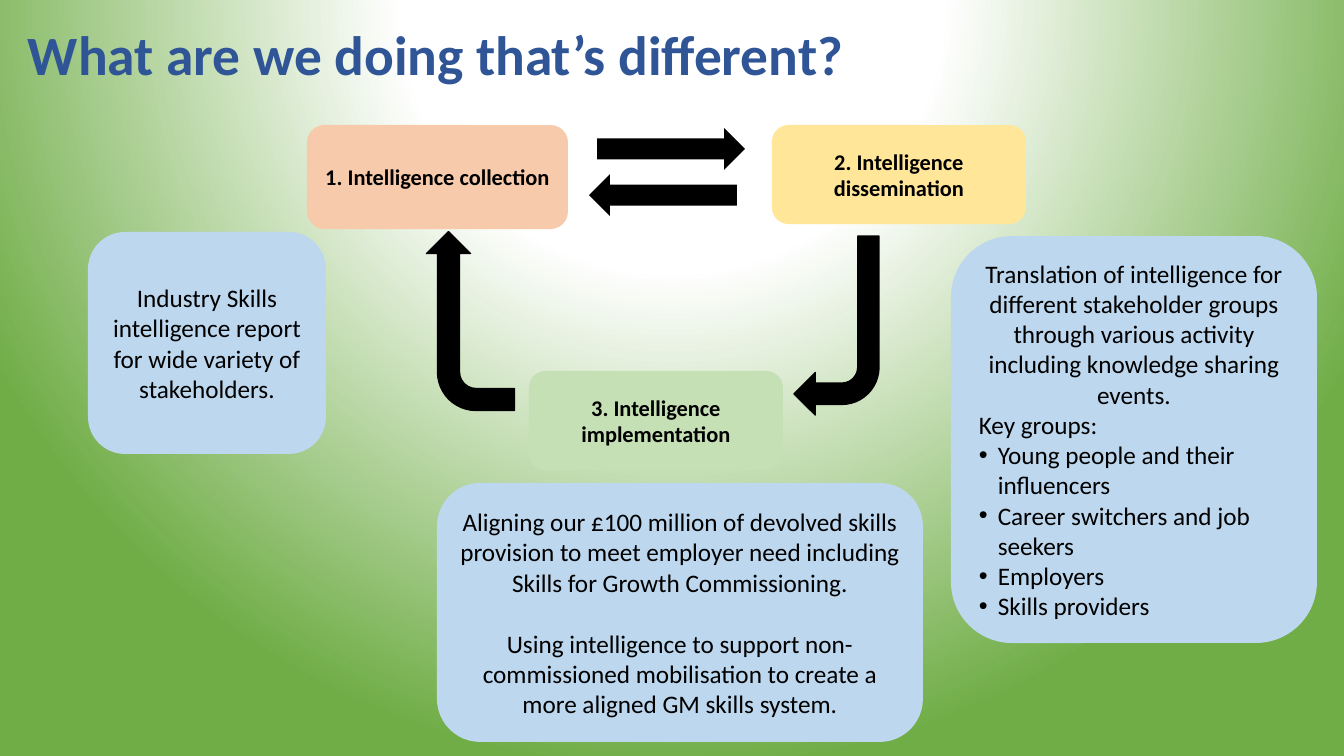
"""Build the slide showing the three-step skills intelligence cycle."""
from dataclasses import dataclass

from pptx import Presentation
from pptx.dml.color import RGBColor
from pptx.enum.shapes import MSO_SHAPE
from pptx.enum.text import MSO_ANCHOR, PP_ALIGN
from pptx.oxml import parse_xml
from pptx.oxml.ns import nsdecls
from pptx.util import Pt


@dataclass(frozen=True)
class Theme:
    font: str = "Calibri"
    title: str = "2F5597"
    ink: str = "000000"
    collection: str = "F8CAAC"
    dissemination: str = "FFE699"
    implementation: str = "C5E0B4"
    detail: str = "BDD7EE"
    glow: str = "FFFFFF"
    edge: str = "70AD47"
    title_size: float = 39.6
    step_size: int = 16
    detail_size: int = 18
    paragraph_gap: int = 22


THEME = Theme()
PX = 9071
BULLET_INDENT = 19
PAGE = (1344, 756)

TITLE = ("What are we doing that’s different?", (18, 20, 878, 74))
STEPS = [
    ("1. Intelligence collection", (307, 125, 261, 104), THEME.collection),
    ("2. Intelligence dissemination", (772, 125, 254, 99), THEME.dissemination),
    ("3. Intelligence implementation", (529, 371, 254, 99), THEME.implementation),
]
DETAILS = [
    ((88, 232, 238, 222), [
        ("Industry Skills intelligence report for wide variety of stakeholders.", {}),
    ]),
    ((437, 483, 486, 259), [
        ("Aligning our £100 million of devolved skills provision to meet employer "
         "need including Skills for Growth Commissioning.", {}),
        ("Using intelligence to support non-commissioned mobilisation to create a "
         "more aligned GM skills system.", {"space_before": THEME.paragraph_gap}),
    ]),
    ((951, 236, 366, 407), [
        ("Translation of intelligence for different stakeholder groups through "
         "various activity including knowledge sharing events.", {}),
        ("Key groups:", {"align": PP_ALIGN.LEFT}),
        *[(group, {"align": PP_ALIGN.LEFT, "bullet": True}) for group in (
            "Young people and their influencers",
            "Career switchers and job seekers",
            "Employers",
            "Skills providers",
        )],
    ]),
]
ARROWS = [
    (MSO_SHAPE.RIGHT_ARROW, (597, 128, 148, 42), 0, 0),
    (MSO_SHAPE.RIGHT_ARROW, (589, 174, 148, 42), 180, 0),
    (MSO_SHAPE.BENT_ARROW, (794, 236, 85, 179), 180, 1),
    (MSO_SHAPE.BENT_ARROW, (381, 277, 179, 88), 270, 1),
]


def scaled(frame):
    return [length * PX for length in frame]


def write(para, text, size=THEME.detail_size, color=THEME.ink, bold=False,
          align=PP_ALIGN.CENTER, space_before=0, line_spacing=None, bullet=False):
    para.alignment = align
    if space_before:
        para.space_before = Pt(space_before)
    if line_spacing:
        para.line_spacing = line_spacing
    if bullet:
        properties = para._p.get_or_add_pPr()
        properties.set("marL", str(BULLET_INDENT * PX))
        properties.set("indent", str(-BULLET_INDENT * PX))
        properties.append(parse_xml(f'<a:buFont {nsdecls("a")} typeface="Arial"/>'))
        properties.append(parse_xml(f'<a:buChar {nsdecls("a")} char="•"/>'))
    span = para.add_run()
    span.text = text
    span.font.name = THEME.font
    span.font.size = Pt(size)
    span.font.bold = bold
    span.font.color.rgb = RGBColor.from_string(color)


def fill_text(box, lines, **style):
    frame = box.text_frame
    frame.word_wrap = True
    frame.vertical_anchor = MSO_ANCHOR.MIDDLE
    for index, (text, extra) in enumerate(lines):
        para = frame.add_paragraph() if index else frame.paragraphs[0]
        write(para, text, **style, **extra)


def add_block(page, kind, frame, color, outline=0):
    block = page.shapes.add_shape(kind, *scaled(frame))
    block.shadow.inherit = False
    block.fill.solid()
    block.fill.fore_color.rgb = RGBColor.from_string(color)
    if outline:
        block.line.color.rgb = RGBColor.from_string(color)
        block.line.width = Pt(outline)
    else:
        block.line.fill.background()
    return block


def paint_background(page):
    page.background.fill.gradient()
    old = page.element.xpath(".//p:bg//a:gradFill")[0]
    stops = "".join(
        f'<a:gs pos="{percent * 1000}"><a:srgbClr val="{color}"/></a:gs>'
        for percent, color in ((0, THEME.glow), (35, THEME.glow), (100, THEME.edge)))
    gradient = parse_xml(
        f'<a:gradFill {nsdecls("a")} rotWithShape="1"><a:gsLst>{stops}</a:gsLst>'
        '<a:path path="circle">'
        '<a:fillToRect l="50000" t="-80000" r="50000" b="180000"/>'
        '</a:path></a:gradFill>')
    old.getparent().replace(old, gradient)


def main():
    deck = Presentation()
    deck.slide_width, deck.slide_height = scaled(PAGE)
    page = deck.slides.add_slide(deck.slide_layouts[6])
    paint_background(page)

    heading, frame = TITLE
    fill_text(page.shapes.add_textbox(*scaled(frame)), [(heading, {})],
              size=THEME.title_size, color=THEME.title, bold=True,
              align=PP_ALIGN.LEFT, line_spacing=0.9)
    for text, frame, color in STEPS:
        step = add_block(page, MSO_SHAPE.ROUNDED_RECTANGLE, frame, color)
        fill_text(step, [(text, {})], size=THEME.step_size, bold=True)
    for frame, lines in DETAILS:
        detail = add_block(page, MSO_SHAPE.ROUNDED_RECTANGLE, frame, THEME.detail)
        fill_text(detail, lines)
    for kind, frame, rotation, outline in ARROWS:
        add_block(page, kind, frame, THEME.ink, outline).rotation = rotation

    deck.save("out.pptx")


if __name__ == "__main__":
    main()
